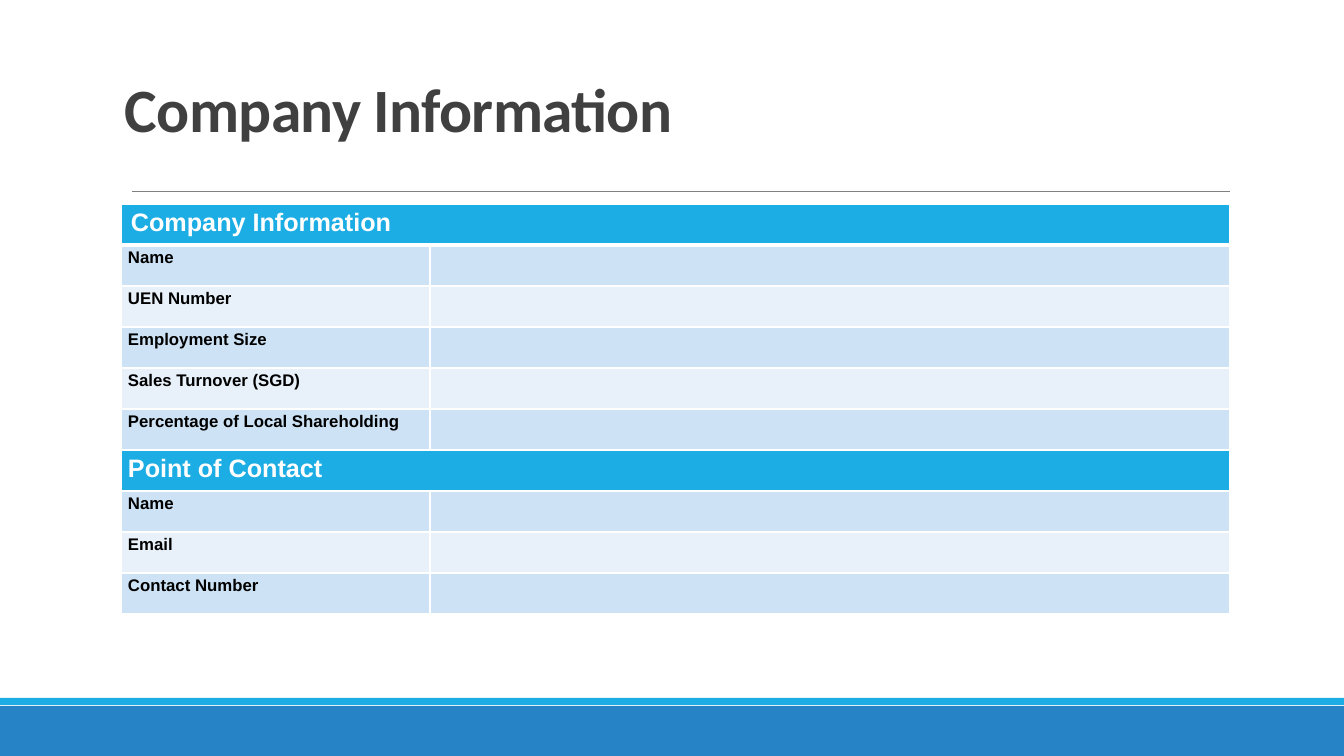
import pptx
import pptx.dml.color
import pptx.enum.shapes
import pptx.enum.text
import pptx.oxml
import pptx.oxml.ns
import pptx.util
import lxml.etree

RGBColor = pptx.dml.color.RGBColor
WHITE = RGBColor(0xFF, 0xFF, 0xFF)
BLACK = RGBColor(0, 0, 0)
CHARCOAL = RGBColor(0x40, 0x40, 0x40)
GREY = RGBColor(0x80, 0x80, 0x80)
SKY = RGBColor(0x1C, 0xAD, 0xE4)
BLUE = RGBColor(0x26, 0x83, 0xC6)
BAND_DARK = RGBColor(0xCD, 0xE3, 0xF5)
BAND_LIGHT = RGBColor(0xE8, 0xF1, 0xFA)
Pt = pptx.util.Pt


def px(n):
    return pptx.util.Emu(round(n * 12192000 / 1344))


def set_borders(cell, bottom_width):
    """White borders; they must precede the fill in the cell properties."""
    properties = cell._tc.get_or_add_tcPr()
    widths = {"lnL": 1, "lnR": 1, "lnT": 1, "lnB": bottom_width}
    for place, (side, width) in enumerate(widths.items()):
        border = pptx.oxml.parse_xml(
            f'<a:{side} {pptx.oxml.ns.nsdecls("a")} w="{Pt(width)}">'
            f'<a:solidFill><a:srgbClr val="{WHITE}"/></a:solidFill></a:{side}>')
        properties.insert(place, border)


presentation = pptx.Presentation()
presentation.slide_width = px(1344)
presentation.slide_height = px(756)
slide = presentation.slides.add_slide(presentation.slide_layouts[6])

# Footer bands
for top, height, color in ((706, 50, BLUE), (698, 7, SKY)):
    band = slide.shapes.add_shape(pptx.enum.shapes.MSO_SHAPE.RECTANGLE,
                                  px(0), px(top), px(1344), px(height))
    band.shadow.inherit = False
    band.fill.solid()
    band.fill.fore_color.rgb = color
    band.line.fill.background()

# Rule below the title
rule = slide.shapes.add_connector(pptx.enum.shapes.MSO_CONNECTOR.STRAIGHT,
                                  px(132), px(191), px(1230), px(191))
rule.line.color.rgb = GREY
rule.line.width = Pt(0.5)
lxml.etree.SubElement(rule._element.spPr, pptx.oxml.ns.qn("a:effectLst"))

# Title
title = slide.shapes.add_textbox(px(115), px(47), px(1159), px(103)).text_frame
title.word_wrap = True
title.vertical_anchor = pptx.enum.text.MSO_ANCHOR.BOTTOM
title.text = "Company Information"
title.paragraphs[0].line_spacing = 0.85
title_run = title.paragraphs[0].runs[0]
title_run.font.name = "Calibri"
title_run.font.size = Pt(44)
title_run.font.bold = True
title_run.font.color.rgb = CHARCOAL
title_run._r.get_or_add_rPr().set("spc", "-50")

# Company table
HEADINGS = ("Company Information", "Point of Contact")
labels = (HEADINGS[0], "Name", "UEN Number", "Employment Size",
          "Sales Turnover (SGD)", "Percentage of Local Shareholding",
          HEADINGS[1], "Name", "Email", "Contact Number")
ROW_HEIGHT = 41
table = slide.shapes.add_table(len(labels), 2, px(121), px(204), px(1109),
                               px(ROW_HEIGHT * len(labels))).table
table.columns[0].width = px(309)
table.columns[1].width = px(800)

for row, label in enumerate(labels):
    table.rows[row].height = px(ROW_HEIGHT)
    is_heading = label in HEADINGS
    is_top = row == 0
    if is_heading:
        table.cell(row, 0).merge(table.cell(row, 1))
        fill = SKY
    else:
        fill = BAND_DARK if row % 2 else BAND_LIGHT

    for cell in table.rows[row].cells:
        cell.fill.solid()
        cell.fill.fore_color.rgb = fill
        cell.margin_left = cell.margin_right = px(10 if is_top else 7)
        cell.margin_top = cell.margin_bottom = px(5 if is_top else 0)
        set_borders(cell, 3 if is_top else 1)

    label_cell = table.cell(row, 0)
    label_cell.text_frame.text = label
    paragraph = label_cell.text_frame.paragraphs[0]
    paragraph.line_spacing = 1.0 if is_top else 1.15
    font = paragraph.runs[0].font
    font.name = "Arial"
    font.bold = True
    font.size = Pt(18 if is_heading else 12)
    font.color.rgb = WHITE if is_heading else BLACK

presentation.save("out.pptx")
